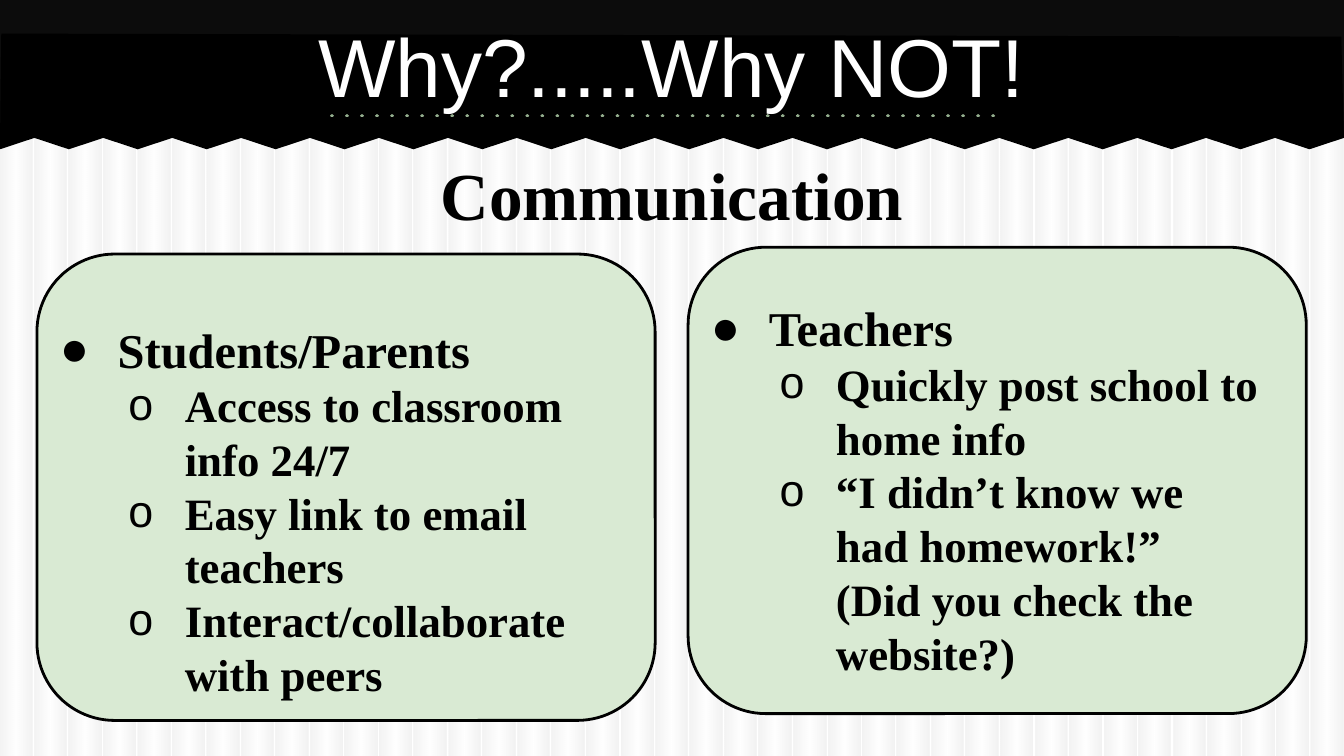
from dataclasses import dataclass
from typing import Optional

from lxml.etree import SubElement
from pptx import Presentation
from pptx.dml.color import RGBColor
from pptx.enum.shapes import MSO_CONNECTOR, MSO_SHAPE
from pptx.enum.text import MSO_ANCHOR, MSO_AUTO_SIZE, PP_ALIGN
from pptx.oxml.ns import qn
from pptx.util import Inches, Pt

BLACK = RGBColor(0x00, 0x00, 0x00)
COAL = RGBColor(0x0C, 0x0C, 0x0C)
WHITE = RGBColor(0xFF, 0xFF, 0xFF)
GREY = RGBColor(0xBF, 0xBF, 0xBF)
SAGE = RGBColor(0x94, 0xAE, 0x8E)
MINT = RGBColor(0xD9, 0xEA, 0xD3)
SERIF, SANS = "Times New Roman", "Arial"
WIDE = Inches(10)
HIGH = WIDE * 9 // 16
BANDS = 39


@dataclass(frozen=True)
class Box:
    left: float
    top: float
    width: float
    height: float

    def place(self) -> tuple:
        return (across(self.left), down(self.top),
                across(self.width), down(self.height))


@dataclass(frozen=True)
class Mark:
    sign: str
    left: float
    hang: float
    size: float


@dataclass(frozen=True)
class Panel:
    slot: int
    card: Box
    body: Box
    head: str
    items: tuple


HEAD = Mark("●", 0.5, 0.43, 26)
ITEM = Mark("o", 1, 0.42, 24)
PANELS = (
    Panel(4, Box(51.2, 32.7, 46, 61.7), Box(51.2, 37.7, 43.8, 57.6), "Teachers",
          ("Quickly post school to home info",
           "“I didn’t know we had homework!”  (Did you check the website?)")),
    Panel(2, Box(2.75, 33.6, 46, 61.7), Box(2.75, 40.5, 44.4, 59.2), "Students/Parents",
          ("Access to classroom info 24/7",
           "Easy link to email teachers",
           "Interact/collaborate with peers")),
)


def across(share: float) -> int:
    return round(WIDE * share / 100)


def down(share: float) -> int:
    return round(HIGH * share / 100)


def paint(shape, fill: Optional[RGBColor], line: Optional[RGBColor]) -> None:
    shape.shadow.inherit = False
    if fill is None:
        shape.fill.background()
    else:
        shape.fill.solid()
        shape.fill.fore_color.rgb = fill
    if line is None:
        shape.line.fill.background()
    else:
        shape.line.color.rgb = line
        shape.line.width = Pt(1.5)


def add_box(slide, kind, box: Box, fill: Optional[RGBColor] = None,
            line: Optional[RGBColor] = None):
    shape = slide.shapes.add_shape(kind, *box.place())
    paint(shape, fill, line)
    return shape


def add_stripes(slide) -> None:
    pitch = 100 / (BANDS - 0.05)
    for band in range(BANDS):
        stripe = add_box(slide, MSO_SHAPE.RECTANGLE, Box(band * pitch, 0.18, 2.4, 99.82))
        props = stripe._element.spPr
        blend = SubElement(props, qn("a:gradFill"), rotWithShape="1")
        stops = SubElement(blend, qn("a:gsLst"))
        for spot, color in ((0, GREY), (50, WHITE), (97, GREY), (100, GREY)):
            stop = SubElement(stops, qn("a:gs"), pos=str(spot * 1000))
            tone = SubElement(stop, qn("a:srgbClr"), val=str(color))
            SubElement(tone, qn("a:alpha"), val="19000")
        SubElement(blend, qn("a:lin"), ang="0", scaled="0")
        props.replace(props.find(qn("a:noFill")), blend)


def add_banner(slide) -> None:
    add_box(slide, MSO_SHAPE.RECTANGLE, Box(0, 0, 100, 18.15), COAL)
    teeth = [(across(100 - 100 * step / BANDS), down(19.75 if step % 2 else 18.25))
             for step in range(BANDS + 1)]
    edge = slide.shapes.build_freeform(across(0.1), down(4.45))
    edge.add_line_segments([(across(99.8), down(4.85)), *teeth], close=True)
    paint(edge.convert_to_shape(), BLACK, None)


def add_dots(slide) -> None:
    rule = slide.shapes.add_connector(
        MSO_CONNECTOR.STRAIGHT, across(24.7), down(15.3), across(75), down(15.3))
    rule.line.color.rgb = SAGE
    rule.line.width = Pt(2)
    line = rule.line._get_or_add_ln()
    line.set("cap", "rnd")
    SubElement(line, qn("a:prstDash"), val="dot")
    SubElement(rule._element.spPr, qn("a:effectLst"))


def set_frame(slide, shape, box: Box, anchor=MSO_ANCHOR.TOP):
    shape.left, shape.top, shape.width, shape.height = box.place()
    slide.shapes._spTree.append(shape._element)
    frame = shape.text_frame
    frame.word_wrap = True
    frame.auto_size = MSO_AUTO_SIZE.NONE
    frame.vertical_anchor = anchor
    frame.margin_left = frame.margin_right = Inches(0.1)
    frame.margin_top = frame.margin_bottom = Inches(0.1)
    return frame


def write(para, text: str, *, size: float, font: str = SERIF, color: RGBColor = BLACK,
          bold: bool = True, align=PP_ALIGN.LEFT, before: float = 0,
          mark: Optional[Mark] = None) -> None:
    para.alignment = align
    para.space_before = Pt(before)
    para.space_after = Pt(0)
    para.line_spacing = 1.0
    props = para._p.get_or_add_pPr()
    if mark:
        props.set("marL", str(Inches(mark.left)))
        props.set("indent", str(-Inches(mark.hang)))
        tint = SubElement(props, qn("a:buClr"))
        SubElement(tint, qn("a:srgbClr"), val=str(color))
        SubElement(props, qn("a:buFont"), typeface=SANS)
        SubElement(props, qn("a:buChar"), char=mark.sign)
    else:
        props.set("marL", "0")
        props.set("indent", "0")
        SubElement(props, qn("a:buNone"))
    run = para.add_run()
    run.text = text
    run.font.size = Pt(size)
    run.font.name = font
    run.font.bold = bold
    run.font.color.rgb = color


def add_list(slide, panel: Panel) -> None:
    frame = set_frame(slide, slide.placeholders[panel.slot], panel.body)
    write(frame.paragraphs[0], panel.head, size=HEAD.size, mark=HEAD)
    for item in panel.items:
        para = frame.add_paragraph()
        para.level = 1
        write(para, item, size=ITEM.size, mark=ITEM)


def main() -> None:
    deck = Presentation()
    deck.slide_width, deck.slide_height = WIDE, HIGH
    slide = deck.slides.add_slide(deck.slide_layouts[4])
    slide.background.fill.solid()
    slide.background.fill.fore_color.rgb = WHITE
    spare = slide.placeholders[3]._element
    spare.getparent().remove(spare)
    add_stripes(slide)
    add_banner(slide)
    add_dots(slide)
    for panel in PANELS:
        add_box(slide, MSO_SHAPE.ROUNDED_RECTANGLE, panel.card, MINT, BLACK)
    for panel in reversed(PANELS):
        add_list(slide, panel)
    title = set_frame(slide, slide.shapes.title, Box(5, 0.18, 90, 16.7), MSO_ANCHOR.MIDDLE)
    write(title.paragraphs[0], "Why?.....Why NOT!", size=44, font=SANS, color=WHITE,
          bold=False, align=PP_ALIGN.CENTER)
    topic = set_frame(slide, slide.placeholders[1], Box(3.2, 18.5, 93.6, 16.7))
    write(topic.paragraphs[0], "Communication", size=36, align=PP_ALIGN.CENTER, before=4)
    deck.save("out.pptx")


if __name__ == "__main__":
    main()
